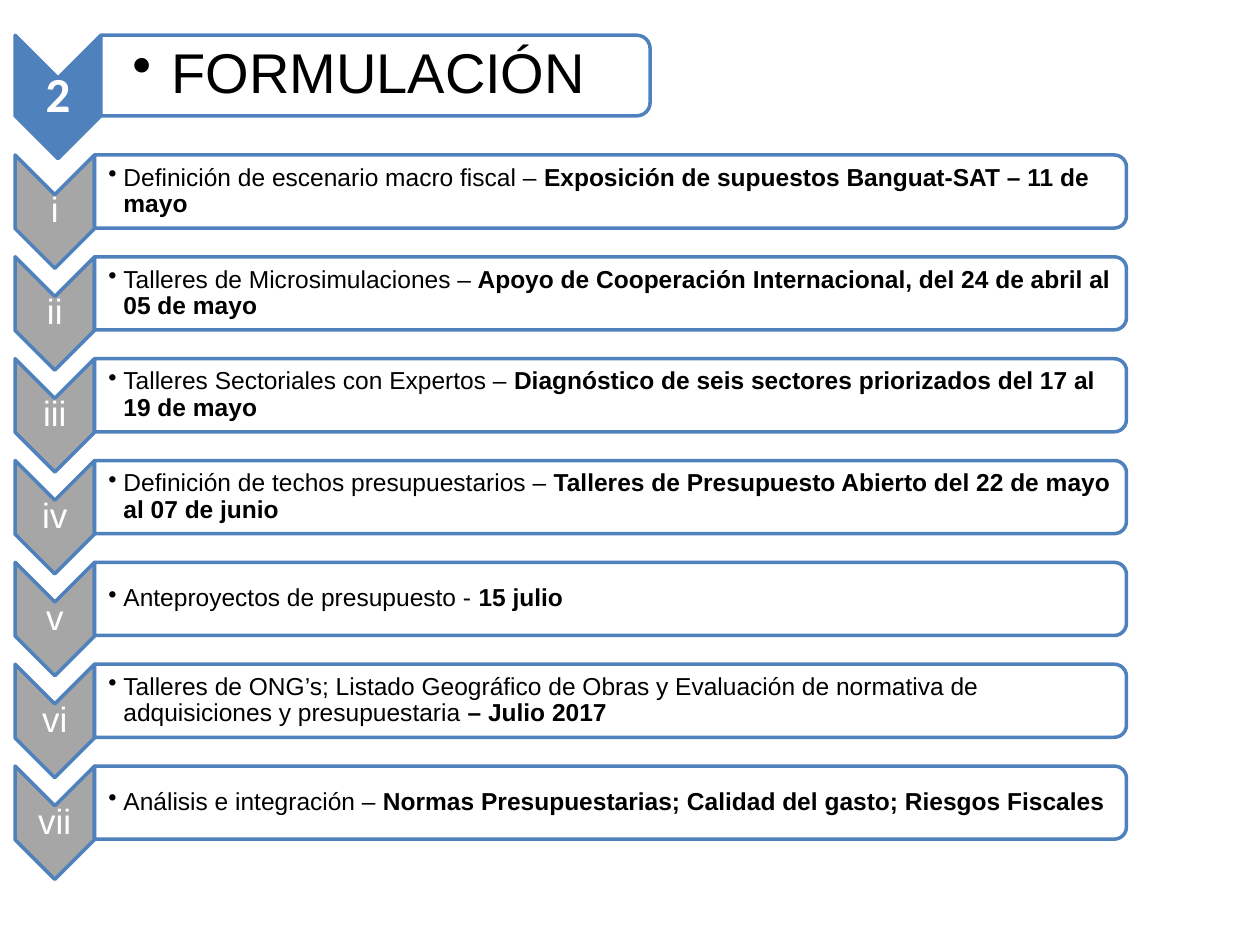
"""Build the budget formulation slide: a numbered title and seven chevron steps."""
from lxml import etree
from pptx import Presentation
from pptx.dml.color import RGBColor
from pptx.enum.shapes import MSO_SHAPE
from pptx.enum.text import MSO_ANCHOR, PP_ALIGN
from pptx.oxml.ns import qn
from pptx.util import Inches, Pt

CHEVRON = MSO_SHAPE.CHEVRON
ROUNDED_BAR = MSO_SHAPE.ROUND_2_SAME_RECTANGLE
MIDDLE = MSO_ANCHOR.MIDDLE
CENTER, LEFT = PP_ALIGN.CENTER, PP_ALIGN.LEFT

BLUE = RGBColor(0x4F, 0x81, 0xBD)
GRAY = RGBColor(0xA6, 0xA6, 0xA6)
WHITE = RGBColor(0xFF, 0xFF, 0xFF)
BLACK = RGBColor(0x00, 0x00, 0x00)

MARGIN = 0.12
FIRST_TOP, LAST_TOP = 1.23, 6.08

TITLE = {
    "chevron": (0.68, 0.98), "bar": (4.36, 0.64), "fill": BLUE,
    "label_height": 0.29, "text_height": 0.57, "inset": 0.02,
    "text_inset": 0.25, "indent": 0.31,
    "label_font": {"size": Pt(28), "name": "Calibri", "bold": True},
    "text_font": {"size": Pt(32), "name": "Arial"},
}
STEP = {
    "chevron": (0.63, 0.9), "bar": (8.19, 0.58), "fill": GRAY,
    "label_height": 0.27, "text_height": 0.53, "inset": 0.01,
    "text_inset": 0.11, "indent": 0.12,
    "label_font": {"size": Pt(20), "name": "Arial"},
    "text_font": {"size": Pt(14), "name": "Arial"},
}
STEPS = [
    ("i", "Definición de escenario macro fiscal – ",
     "Exposición de supuestos Banguat-SAT – 11 de mayo"),
    ("ii", "Talleres de Microsimulaciones –",
     " Apoyo de Cooperación Internacional, del 24 de abril al 05 de mayo"),
    ("iii", "Talleres Sectoriales con Expertos – ",
     "Diagnóstico de seis sectores priorizados del 17 al 19 de mayo"),
    ("iv", "Definición de techos presupuestarios – ",
     "Talleres de Presupuesto Abierto del 22 de mayo al 07 de junio"),
    ("v", "Anteproyectos de presupuesto - ", "15 julio"),
    ("vi", "Talleres de ONG’s; Listado Geográfico de Obras y Evaluación de "
     "normativa de adquisiciones y presupuestaria ", "– Julio 2017"),
    ("vii", "Análisis e integración – ",
     "Normas Presupuestarias; Calidad del gasto; Riesgos Fiscales"),
]


def add_turned_shape(shapes, kind, left, top, size, fill):
    """Add a preset turned a quarter that fills the given upright area."""
    width, height = size
    shift = (width - height) / 2
    shape = shapes.add_shape(kind, Inches(left + shift), Inches(top - shift),
                             Inches(height), Inches(width))
    shape.rotation = 90
    shape.shadow.inherit = False
    shape.fill.solid()
    shape.fill.fore_color.rgb = fill
    shape.line.color.rgb = BLUE
    shape.line.width = Pt(2)
    return shape


def add_text(shapes, area, inset, left_inset, alignment, color, runs):
    """Add a text box with one paragraph and return that paragraph."""
    frame = shapes.add_textbox(*map(Inches, area)).text_frame
    frame_format = {
        "word_wrap": True, "vertical_anchor": MIDDLE,
        "margin_left": Inches(left_inset), "margin_top": Inches(inset),
        "margin_right": Inches(inset), "margin_bottom": Inches(inset),
    }
    for name, value in frame_format.items():
        setattr(frame, name, value)
    paragraph = frame.paragraphs[0]
    paragraph.alignment = alignment
    paragraph.line_spacing = 0.9
    for text, font_format in runs:
        run = paragraph.add_run()
        run.text = text
        run.font.color.rgb = color
        for name, value in font_format.items():
            setattr(run.font, name, value)
    return paragraph


presentation = Presentation()
presentation.slide_width, presentation.slide_height = Inches(10), Inches(7.5)
slide = presentation.slides.add_slide(presentation.slide_layouts[6])
title_group = slide.shapes.add_group_shape()
steps_group = slide.shapes.add_group_shape()

pitch = (LAST_TOP - FIRST_TOP) / (len(STEPS) - 1)
rows = [(title_group, TITLE, 0.28, "2", "FORMULACIÓN", "")]
rows += [(steps_group, STEP, FIRST_TOP + index * pitch, *step)
         for index, step in enumerate(STEPS)]

for group, style, top, number, plain, bold in rows:
    shapes = group.shapes
    chevron_width, chevron_height = style["chevron"]
    bar_width, bar_height = style["bar"]
    bar_left = MARGIN + chevron_width
    inset = style["inset"]

    add_turned_shape(shapes, CHEVRON, MARGIN, top, style["chevron"], style["fill"])
    label_top = top + (chevron_height - style["label_height"]) / 2
    add_text(shapes, (MARGIN, label_top, chevron_width, style["label_height"]),
             inset, inset, CENTER, WHITE, [(number, style["label_font"])])

    bar = add_turned_shape(shapes, ROUNDED_BAR, bar_left, top, style["bar"], WHITE)
    bar_color = bar.fill._xPr.find(qn("a:solidFill"))[0]
    etree.SubElement(bar_color, qn("a:alpha"), val="90000")

    runs = [(plain, style["text_font"])]
    if bold:
        runs.append((bold, {**style["text_font"], "bold": True}))
    text_top = top + (bar_height - style["text_height"]) / 2
    paragraph = add_text(
        shapes, (bar_left, text_top, bar_width - 0.03, style["text_height"]),
        inset, style["text_inset"], LEFT, BLACK, runs)
    paragraph.level = 1
    properties = paragraph._p.get_or_add_pPr()
    properties.set("marL", str(Inches(style["indent"])))
    properties.set("indent", str(-Inches(style["indent"])))
    etree.SubElement(properties, qn("a:buChar"), char="•")

presentation.save("out.pptx")
